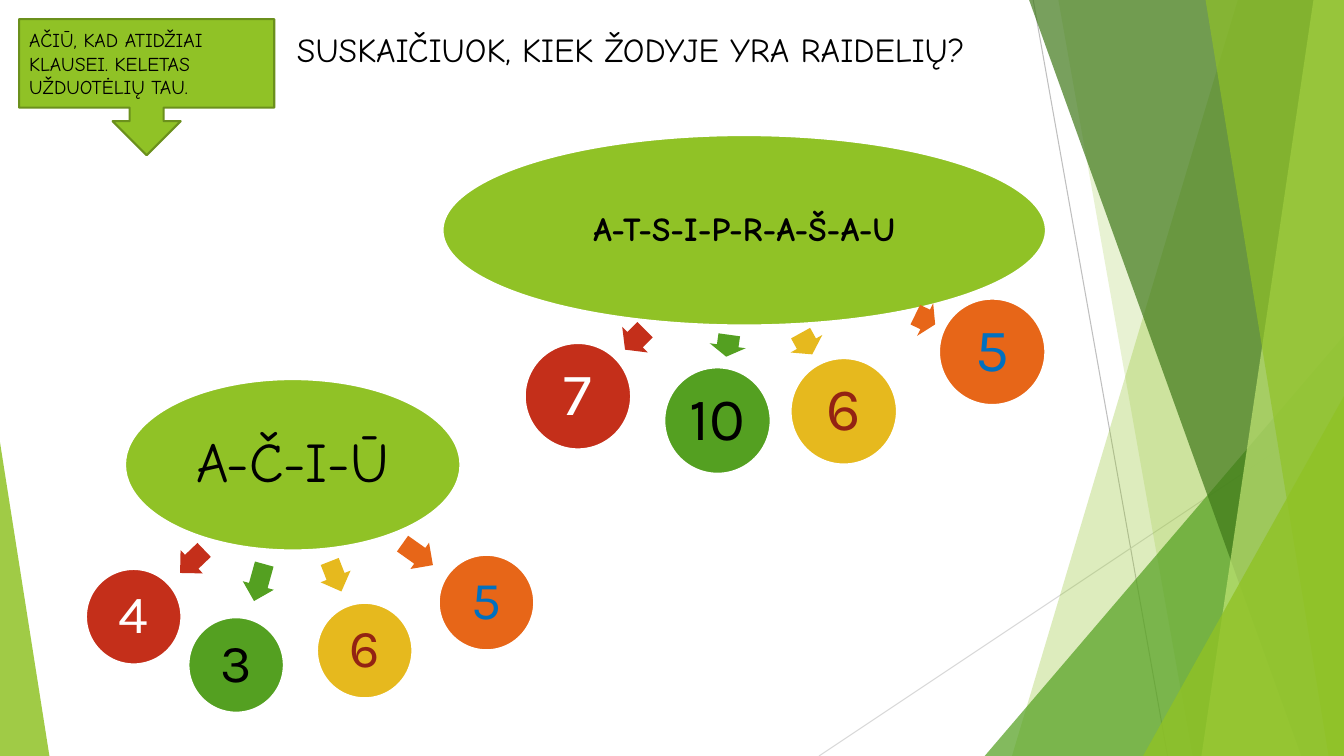
from pptx import Presentation
from pptx.util import Pt
from pptx.dml.color import RGBColor
from pptx.enum.shapes import MSO_SHAPE as SHAPE, MSO_CONNECTOR as CONN
from pptx.enum.text import PP_ALIGN as ALIGN, MSO_ANCHOR as ANCHOR
from pptx.oxml.ns import qn
from lxml.etree import SubElement

W, H = 960, 540
C = dict(lime="90C226", green="54A021", forest="3F7819", pale="C0E474", olive="6B901C",
         red="C42F1A", yellow="E6B91E", orange="E76618", brown="932313", blue="0070C0",
         black="000000", white="FFFFFF", gray="BFBFBF", silver="D9D9D9")
HAND, ROUND = "Comic Neue", "Karla"

TITLE = "SUSKAIČIUOK, KIEK ŽODYJE YRA RAIDELIŲ?"
THANKS = "AČIŪ, KAD ATIDŽIAI KLAUSEI. KELETAS UŽDUOTĖLIŲ TAU."

LINES = [((738, 0), (834, H), "gray"), ((W, 290), (585, H), "silver")]
# band: top x, bottom x; wedge: left, top, width, apex position
DECOR = [
    ("band", (884.2, 722.9), "lime", 30),
    ("band", (756, 851.8), "lime", 20),
    ("wedge", (703.4, 239.8, 256.6, 1), "green", 72),
    ("band", (735.1, 929.5), "forest", 70),
    ("band", (938.2, 858.2), "pale", 70),
    ("band", (861.1, 949), "lime", 65),
    ("wedge", (816.5, 283, 143.5, 1), "lime", 80),
    ("wedge", (0, 316, 35.3, 0), "lime", 85),
]
ANSWER_COLORS = [("green", "black"), ("yellow", "brown"), ("orange", "blue"), ("red", "white")]
TASKS = [
    dict(word="A-Č-I-Ū", box=(89.3, 270.8, 239.6, 122.4), size=40, bold=False,
         circle=68.2, digit=38, answers=[
             ("3", (134.6, 440.9), (171.4, 404.6, 27.4, 23), 105.5),
             ("6", (226.4, 430.6), (228.2, 400.3, 23, 23), 68.7),
             ("5", (313.4, 396.3), (285.1, 384.5, 26.6, 23), 35.3),
             ("4", (61.4, 406.4), (125.3, 389.5, 23.8, 23), 136.2)]),
    dict(word="A-T-S-I-P-R-A-Š-A-U", box=(316.1, 96.5, 431, 136), size=24, bold=True,
         circle=76, digit=43, answers=[
             ("10", (474.5, 262.4), (511.9, 234, 15.8, 25.9), 97.9),
             ("6", (564.7, 255.8), (567.4, 232.6, 17.3, 25.9), 61.1),
             ("5", (670.7, 213.3), (653, 215.3, 15.8, 25.9), 26.1),
             ("7", (374.8, 245), (443.5, 229.7, 20.2, 25.9), 135)]),
]


def rgb(name):
    return RGBColor.from_string(C[name])


def paint(s, fill, line=None, alpha=100):
    """Set fill, outline and opacity, without shadow."""
    s.shadow.inherit = False
    s.fill.solid()
    s.fill.fore_color.rgb = rgb(fill)
    if alpha < 100:
        color = s._element.spPr.find(qn("a:solidFill"))[0]
        SubElement(color, qn("a:alpha")).set("val", str(alpha * 1000))
    if line:
        s.line.color.rgb = rgb(line)
        s.line.width = Pt(1.5)
    else:
        s.line.fill.background()
    return s


def add_shape(shapes, kind, box, fill, line=None, alpha=100):
    return paint(shapes.add_shape(kind, *map(Pt, box)), fill, line, alpha)


def write(s, text, size, font=HAND, color="black", bold=False, align=ALIGN.CENTER,
          anchor=ANCHOR.MIDDLE, spacing=None, inset=None):
    """Put one formatted paragraph in a shape."""
    tf = s.text_frame
    tf.word_wrap = True
    tf.vertical_anchor = anchor
    if inset is not None:
        tf.margin_left = tf.margin_right = tf.margin_top = tf.margin_bottom = Pt(inset)
    p = tf.paragraphs[0]
    p.alignment = align
    p.line_spacing = spacing
    r = p.add_run()
    r.text = text
    r.font.size, r.font.name, r.font.bold = Pt(size), font, bold
    r.font.color.rgb = rgb(color)


def add_decor(shapes):
    """Draw the background lines, bands and wedges."""
    for start, end, color in LINES:
        s = shapes.add_connector(CONN.STRAIGHT, *map(Pt, start + end))
        s.line.color.rgb = rgb(color)
        s.line.width = Pt(0.75)
        SubElement(s._element.spPr, qn("a:effectLst"))
    for kind, place, color, alpha in DECOR:
        if kind == "band":
            top, bottom = place
            fb = shapes.build_freeform(Pt(top), 0)
            fb.add_line_segments([(Pt(W), 0), (Pt(W), Pt(H)), (Pt(bottom), Pt(H))])
            paint(fb.convert_to_shape(), color, alpha=alpha)
        else:
            x, y, width, apex = place
            s = add_shape(shapes, SHAPE.ISOSCELES_TRIANGLE, (x, y, width, H - y), color, alpha=alpha)
            s.adjustments[0] = apex


def add_task(shapes, task):
    """Draw a word with its arrows and answer circles."""
    s = add_shape(shapes, SHAPE.OVAL, task["box"], "lime", "white")
    write(s, task["word"], task["size"], bold=task["bold"], spacing=0.9, inset=4)
    d = task["circle"]
    for (number, corner, arrow, angle), (fill, ink) in zip(task["answers"], ANSWER_COLORS):
        s = add_shape(shapes, SHAPE.RIGHT_ARROW, arrow, fill)
        s.adjustments[0], s.adjustments[1] = 0.6, 0.5
        s.rotation = angle
        s = add_shape(shapes, SHAPE.OVAL, (*corner, d, d), fill, "white")
        write(s, number, task["digit"], font=ROUND, color=ink, spacing=0.9, inset=4)


def main():
    prs = Presentation()
    prs.slide_width, prs.slide_height = Pt(W), Pt(H)
    shapes = prs.slides.add_slide(prs.slide_layouts[6]).shapes
    add_decor(shapes)
    title = shapes.add_textbox(*map(Pt, (188.6, 17.3, 507.6, 45.4)))
    write(title, TITLE, 24, align=ALIGN.RIGHT, anchor=ANCHOR.TOP)
    for task in TASKS:
        add_task(shapes, task)
    s = add_shape(shapes, SHAPE.DOWN_ARROW_CALLOUT, (13.7, 13.7, 182.2, 97.2), "lime", "olive")
    write(s, THANKS, 14, align=ALIGN.LEFT)
    prs.save("out.pptx")


if __name__ == "__main__":
    main()
